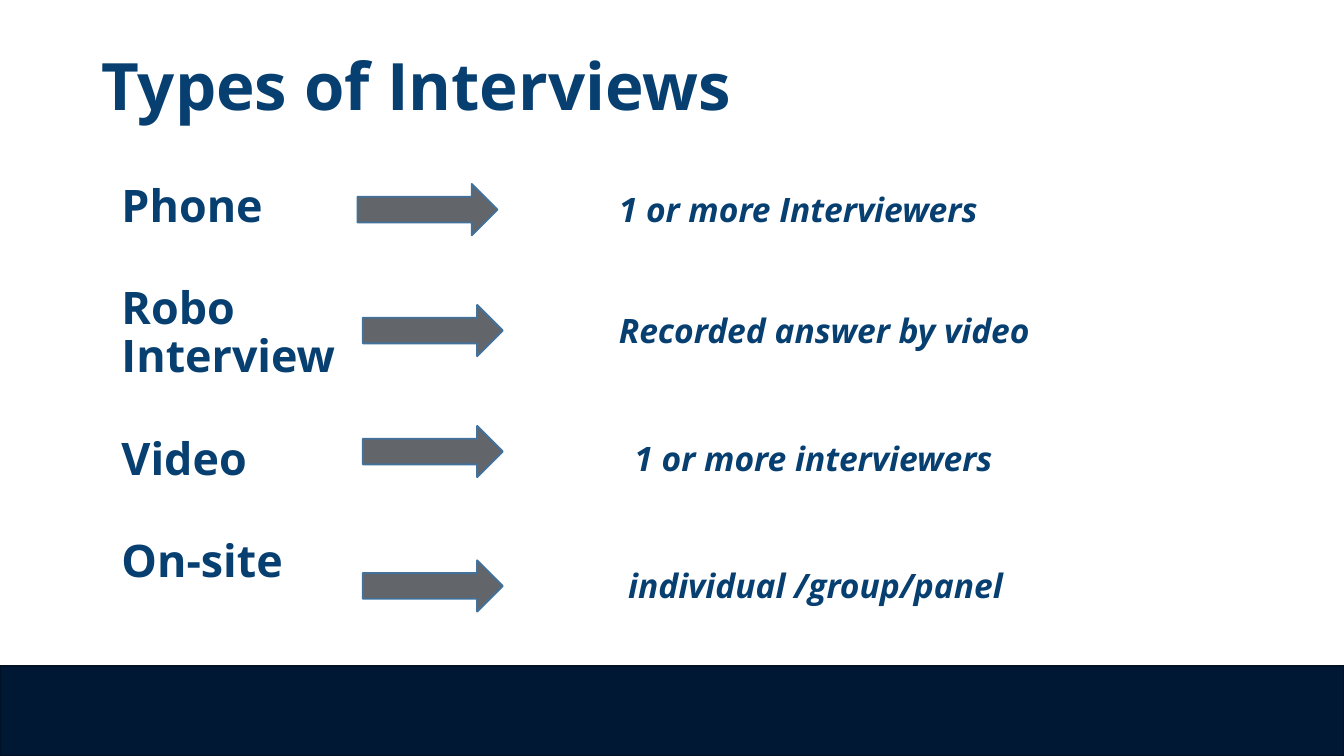
from pptx import Presentation
from pptx.dml.color import RGBColor
from pptx.enum.shapes import MSO_SHAPE as Shape
from pptx.enum.text import MSO_ANCHOR as Anchor, PP_ALIGN as Align
from pptx.util import Pt

NAVY = "063F70"


def write(box, text, size, italic=False, anchor=Anchor.TOP, line_spacing=1.0, gaps=None):
    """Fill box with one paragraph per line; gaps maps a line to its space before."""
    frame = box.text_frame
    frame.word_wrap = True
    frame.vertical_anchor = anchor
    frame.margin_left = frame.margin_right = Pt(5.3)
    frame.margin_top = frame.margin_bottom = Pt(2.65)
    frame.text = text
    for paragraph in frame.paragraphs:
        paragraph.alignment = Align.LEFT
        paragraph.line_spacing = line_spacing
        paragraph.space_before = Pt((gaps or {}).get(paragraph.text, 0))
        for run in paragraph.runs:
            font = run.font
            font.name, font.size = "Open Sans", Pt(size)
            font.bold, font.italic = True, italic
            font.color.rgb = RGBColor.from_string(NAVY)


def add_filled(kind, left, top, width, height, fill, line):
    shape = slide.shapes.add_shape(kind, Pt(left), Pt(top), Pt(width), Pt(height))
    shape.shadow.inherit = False
    shape.fill.solid()
    shape.fill.fore_color.rgb = RGBColor.from_string(fill)
    shape.line.color.rgb = RGBColor.from_string(line)
    shape.line.width = Pt(1)


deck = Presentation()
deck.slide_width, deck.slide_height = Pt(720), Pt(405)
slide = deck.slides.add_slide(deck.slide_layouts[5])

add_filled(Shape.RECTANGLE, 0, 357, 720, 48, "001834", "001125")

title = slide.shapes.title
title.left, title.top, title.width, title.height = Pt(49), Pt(8.6), Pt(412.5), Pt(78.5)
write(title, "Types of Interviews", 35, anchor=Anchor.MIDDLE, line_spacing=0.9)

interview_types = slide.shapes.add_textbox(Pt(59.8), Pt(95.8), Pt(201.6), Pt(249.8))
write(interview_types, "Phone\nRobo\nInterview\nVideo\nOn-site", 24, line_spacing=0.9,
      gaps={"Robo": 28.8, "Video": 28.8, "On-site": 28.8})

# arrow left, arrow top, description left, top, width, description
rows = [
    (191.5, 98.6, 326.2, 98.6, 265.7, "1 or more Interviewers"),
    (194.4, 163.4, 326.2, 163.4, 349.2, "Recorded answer by video"),
    (194.4, 228.2, 334.6, 231.8, 298.8, "1 or more interviewers"),
    (194.4, 300.2, 331.2, 300.2, 388, "individual /group/panel"),
]
for arrow_left, arrow_top, left, top, width, description in rows:
    add_filled(Shape.RIGHT_ARROW, arrow_left, arrow_top, 75, 27.5, "626569", "42719B")
    detail = slide.shapes.add_textbox(Pt(left), Pt(top), Pt(width), Pt(27.5))
    write(detail, description, 18, italic=True)

deck.save("out.pptx")
